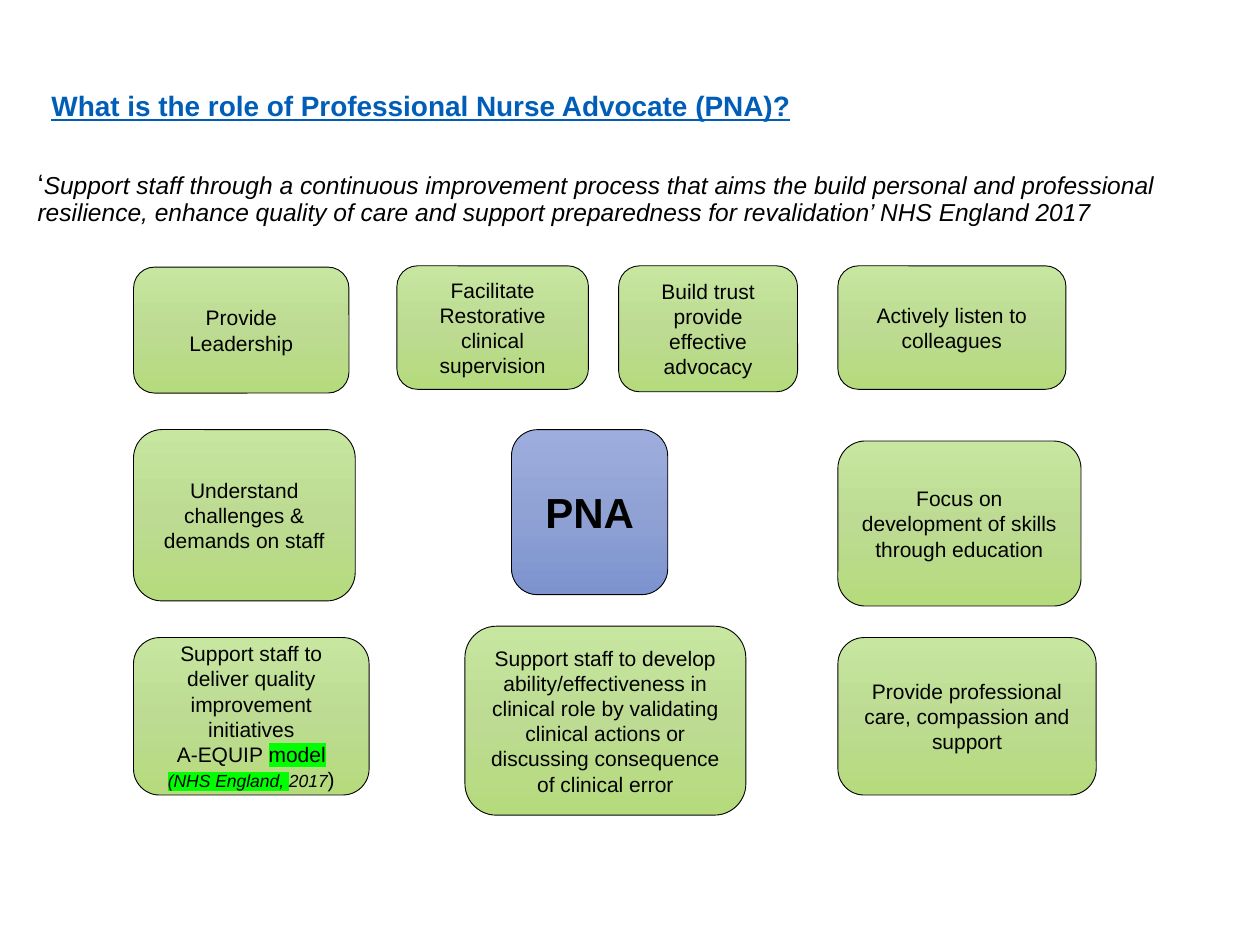
import copy
from dataclasses import dataclass

import pptx
import pptx.dml.color
import pptx.enum.shapes
import pptx.enum.text
import pptx.oxml
import pptx.oxml.ns
import pptx.util

SHAPE = pptx.enum.shapes.MSO_SHAPE
ALIGN = pptx.enum.text.PP_ALIGN
ANCHOR = pptx.enum.text.MSO_ANCHOR
Inches = pptx.util.Inches

GREEN = ("C7E69F", "BDDB92", "B5DB7D")
BLUE = ("9DAEDE", "90A2D4", "7C93CF")

# Grid in inches: outer columns and row tops
LEFT, RIGHT = 1.06, 6.65
ROW1, ROW2, ROW3 = 2.11, 3.41, 5.06


@dataclass
class Card:
    x: float
    y: float
    w: float
    h: float
    text: str = ""
    shape: SHAPE = SHAPE.ROUNDED_RECTANGLE
    size: float = 12
    bold: bool = False
    colors: tuple = GREEN


def rgb(color: str):
    return pptx.dml.color.RGBColor.from_string(color)


def add_text(p, text: str, *, size=12, color="000000", bold=False,
             italic=False, underline=False, highlight=None):
    r = p.add_run()
    r.text = text
    font = r.font
    font.name, font.size = "Arial", pptx.util.Pt(size)
    font.bold, font.italic, font.underline = bold, italic, underline
    font.color.rgb = rgb(color)
    if highlight:
        ns = pptx.oxml.ns.nsdecls("a")
        mark = pptx.oxml.parse_xml(
            f'<a:highlight {ns}><a:srgbClr val="{highlight}"/></a:highlight>')
        r._r.rPr.find(pptx.oxml.ns.qn("a:solidFill")).addnext(mark)


def set_gradient(sp, colors: tuple):
    sp.fill.gradient()
    sp.fill.gradient_angle = 270
    stops = sp._element.spPr.find(".//" + pptx.oxml.ns.qn("a:gsLst"))
    stops.append(copy.deepcopy(stops[0]))
    for i, (stop, color) in enumerate(zip(sp.fill.gradient_stops, colors)):
        stop.color.rgb = rgb(color)
        stop.position = i / 2


def add_card(s, card: Card):
    sp = s.shapes.add_shape(card.shape, *map(Inches, (card.x, card.y, card.w, card.h)))
    sp.shadow.inherit = False
    set_gradient(sp, card.colors)
    sp.line.color.rgb = rgb("000000")
    sp.line.width = pptx.util.Pt(0.5)
    tf = sp.text_frame
    tf.word_wrap = True
    tf.vertical_anchor = ANCHOR.MIDDLE
    p = tf.paragraphs[0]
    p.alignment = ALIGN.CENTER
    add_text(p, card.text, size=card.size, bold=card.bold)
    return tf


def add_box(s, x: float, y: float, w: float, h: float, anchor):
    tf = s.shapes.add_textbox(*map(Inches, (x, y, w, h))).text_frame
    tf.word_wrap = True
    tf.vertical_anchor = anchor
    p = tf.paragraphs[0]
    p.line_spacing = 0.9
    return p


CARDS = [
    # Top row
    Card(LEFT, 2.12, 1.71, 1, "Provide Leadership"),
    Card(3.15, ROW1, 1.52, 0.98, "Facilitate Restorative clinical supervision",
         SHAPE.FLOWCHART_ALTERNATE_PROCESS),
    Card(4.91, ROW1, 1.42, 1, "Build trust provide effective advocacy"),
    Card(RIGHT, ROW1, 1.81, 0.98, "Actively listen to colleagues",
         SHAPE.FLOWCHART_ALTERNATE_PROCESS),
    # Middle row
    Card(LEFT, ROW2, 1.76, 1.36, "Understand challenges & demands on staff"),
    Card(4.06, ROW2, 1.24, 1.31, "PNA", size=24, bold=True, colors=BLUE),
    Card(RIGHT, 3.5, 1.93, 1.31, "Focus on development of skills through education"),
    # Bottom row
    Card(3.69, 4.97, 2.23, 1.5,
         "Support staff to develop ability/effectiveness in clinical role by "
         "validating clinical actions or discussing consequence of clinical error"),
    Card(RIGHT, ROW3, 2.05, 1.25, "Provide professional care, compassion and support"),
]
MODEL_CARD = Card(LEFT, ROW3, 1.87, 1.25,
                  "Support staff to deliver quality improvement initiatives")
MARK = "00FF00"
MODEL_LINES = [
    [("A-EQUIP ", {}), ("model", {"highlight": MARK})],
    [("(NHS England, ", {"size": 10, "italic": True, "highlight": MARK}),
     ("2017", {"size": 10, "italic": True}), (")", {})],
]


def main():
    prs = pptx.Presentation()
    prs.slide_width, prs.slide_height = Inches(10), Inches(7.5)
    s = prs.slides.add_slide(prs.slide_layouts[6])

    # Title and quotation
    p = add_box(s, 0.31, 0.52, 7.75, 0.67, ANCHOR.MIDDLE)
    add_text(p, "What is the role of Professional Nurse Advocate (PNA)?",
             size=16, color="005EB8", bold=True, underline=True)
    p = add_box(s, 0.2, 1.3, 9.54, 5.44, ANCHOR.TOP)
    add_text(p, "‘", size=16)
    add_text(p, "Support staff through a continuous improvement process that aims "
             "the build personal and professional resilience, enhance quality of care "
             "and support preparedness for revalidation’ NHS England 2017",
             size=14, italic=True)

    # Role cards
    for card in CARDS:
        add_card(s, card)

    # Card with the cited model
    tf = add_card(s, MODEL_CARD)
    for line in MODEL_LINES:
        p = tf.add_paragraph()
        p.alignment = ALIGN.CENTER
        for text, fmt in line:
            add_text(p, text, **fmt)

    prs.save("out.pptx")


if __name__ == "__main__":
    main()
